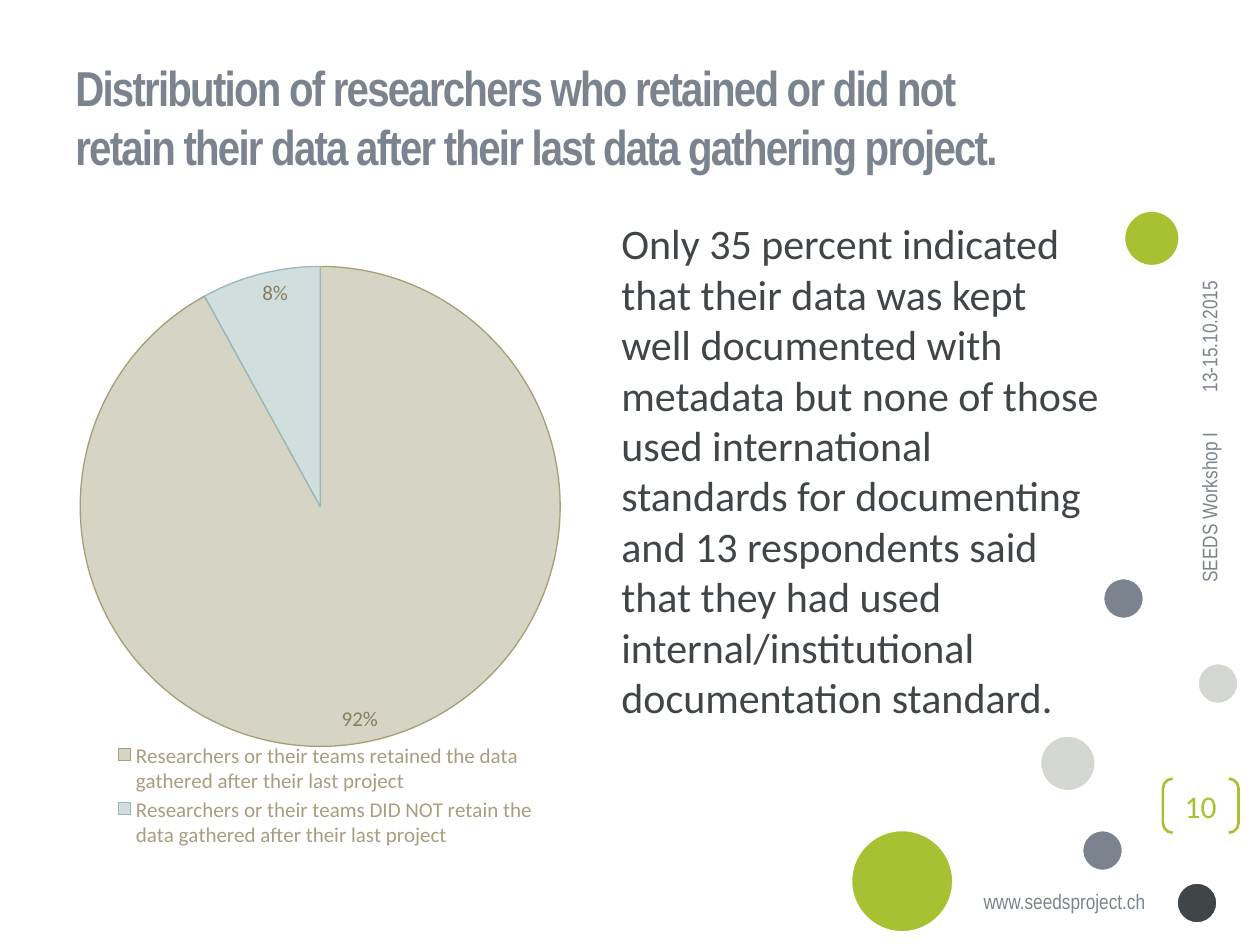
"""Build the slide on researchers who retained their project data."""
from dataclasses import dataclass
from typing import Optional

import pptx
import pptx.chart.data
import pptx.dml.color
import pptx.enum.chart
import pptx.enum.shapes
import pptx.enum.text
import pptx.oxml
import pptx.oxml.ns
import pptx.util

RGBColor = pptx.dml.color.RGBColor
Align = pptx.enum.text.PP_ALIGN
Anchor = pptx.enum.text.MSO_ANCHOR
Shape = pptx.enum.shapes.MSO_SHAPE

WHITE = RGBColor(0xFF, 0xFF, 0xFF)
GREEN = RGBColor(0xA7, 0xC1, 0x33)
CHARCOAL = RGBColor(0x40, 0x45, 0x48)
PALE = RGBColor(0xD4, 0xD6, 0xD2)
SLATE = RGBColor(0x7B, 0x83, 0x8F)
LEGEND_TAN = RGBColor(0xA8, 0x9D, 0x7F)
LABEL_BROWN = RGBColor(0x89, 0x7D, 0x5D)

WIDTH, HEIGHT = pptx.util.Inches(10), pptx.util.Inches(7.5)
COLUMNS, ROWS = 120, 90
LARGE, MEDIUM, SMALL = 9.84, 5.4, 4


@dataclass(frozen=True)
class Area:
    """Place and size in grid columns and rows."""
    column: float
    row: float
    columns: float
    rows: float

    def box(self) -> tuple[int, int, int, int]:
        """Return left, top, width and height on the slide."""
        return (int(WIDTH * self.column / COLUMNS), int(HEIGHT * self.row / ROWS),
                int(WIDTH * self.columns / COLUMNS), int(HEIGHT * self.rows / ROWS))


@dataclass(frozen=True)
class Bubble:
    """Decorative circle."""
    column: float
    row: float
    diameter: float
    color: RGBColor


@dataclass(frozen=True)
class Label:
    """Text with its place and look."""
    text: str
    area: Area
    size: float = 12
    font: str = "Arial Narrow"
    color: RGBColor = SLATE
    bold: bool = False
    tracking: Optional[int] = None
    align: Align = Align.LEFT
    anchor: Anchor = Anchor.MIDDLE
    rotation: float = 0
    wrap: bool = True


@dataclass(frozen=True)
class Slice:
    """Pie slice with its category."""
    category: str
    percent: int
    fill: RGBColor
    outline: RGBColor


BUBBLES = [
    Bubble(81, 79, LARGE, GREEN),
    Bubble(107, 20, MEDIUM, GREEN),
    Bubble(112, 84, SMALL, CHARCOAL),
    Bubble(99, 70, MEDIUM, PALE),
    Bubble(114, 63.1, SMALL, PALE),
    Bubble(103, 79, SMALL, SLATE),
    Bubble(105, 55, SMALL, SLATE),
]
LABELS = [
    Label("www.seedsproject.ch", Area(92.5, 84, 18.5, 3.6), anchor=Anchor.TOP, wrap=False),
    Label("SEEDS Workshop I", Area(104.64, 48.36, 21, 4.32), align=Align.RIGHT, rotation=270),
    Label("13-15.10.2015", Area(107.4, 28.8, 15.5, 3.96), rotation=270),
    Label("Distribution of researchers who retained or did not retain their data "
          "after their last data gathering project.",
          Area(6, 3.6, 96, 15), size=28, bold=True, tracking=-100),
    Label("Only 35 percent indicated that their data was kept well documented with "
          "metadata but none of those used international standards for documenting "
          "and 13 respondents said that they had used internal/institutional "
          "documentation standard.",
          Area(58, 20.16, 48, 60.24), size=24, font="Calibri", color=CHARCOAL,
          anchor=Anchor.TOP),
]
PAGE_NUMBER = Label("10", Area(110.76, 74.16, 7.2, 5.16), size=18, font="Calibri",
                    color=GREEN, align=Align.CENTER)
SLICES = [
    Slice("Researchers or their teams retained the data gathered after their last project",
          92, RGBColor(0xD5, 0xD4, 0xC5), RGBColor(0xA3, 0xA0, 0x74)),
    Slice("Researchers or their teams DID NOT retain the data gathered after their last project",
          8, RGBColor(0xD0, 0xDE, 0xDE), RGBColor(0x9A, 0xB8, 0xB8)),
]
CHART_AREA = Area(6, 20.16, 49, 62.88)
PIE_SHARE = (0.033, 0.083, 0.934, 0.727)
LEGEND_SHARE = (0.08, 0.8, 0.86, 0.17)


def draw_bubble(shapes, bubble: Bubble) -> None:
    """Draw one circle with a white rim."""
    area = Area(bubble.column, bubble.row, bubble.diameter, bubble.diameter)
    circle = shapes.add_shape(Shape.OVAL, *area.box())
    circle.shadow.inherit = False
    circle.fill.solid()
    circle.fill.fore_color.rgb = bubble.color
    circle.line.color.rgb = WHITE
    circle.line.width = pptx.util.Pt(2)


def write_label(frame, label: Label) -> None:
    """Fill a text frame and format its run."""
    frame.text = label.text
    frame.word_wrap = label.wrap
    frame.vertical_anchor = label.anchor
    paragraph = frame.paragraphs[0]
    paragraph.alignment = label.align
    run = paragraph.runs[0]
    style_font(run.font, label.size, label.color, label.font)
    run.font.bold = label.bold
    if label.tracking is not None:
        run._r.get_or_add_rPr().set("spc", str(label.tracking))


def draw_label(shapes, label: Label) -> None:
    """Draw one text box."""
    box = shapes.add_textbox(*label.area.box())
    box.rotation = label.rotation
    write_label(box.text_frame, label)


def draw_page_number(shapes, label: Label) -> None:
    """Draw the page number between brackets."""
    brackets = shapes.add_shape(Shape.DOUBLE_BRACKET, *label.area.box())
    brackets.adjustments[0] = 0.18
    brackets.shadow.inherit = False
    brackets.fill.background()
    brackets.line.color.rgb = GREEN
    brackets.line.width = pptx.util.Pt(1.5)
    frame = brackets.text_frame
    frame.margin_left = frame.margin_right = frame.margin_top = frame.margin_bottom = 0
    write_label(frame, label)


def style_font(font, size: float, color: RGBColor, name: str = "Calibri") -> None:
    """Set size, colour and typeface."""
    font.size = pptx.util.Pt(size)
    font.color.rgb = color
    font.name = name


def layout_xml(share: tuple[float, ...], inner: bool):
    """Return a manual chart layout for shares of the chart's size."""
    target = '<c:layoutTarget val="inner"/>' if inner else ""
    modes = '<c:xMode val="edge"/><c:yMode val="edge"/>'
    sizes = "".join(f'<c:{key} val="{value}"/>' for key, value in zip("xywh", share))
    return pptx.oxml.parse_xml(
        f'<c:layout {pptx.oxml.ns.nsdecls("c")}><c:manualLayout>'
        f"{target}{modes}{sizes}</c:manualLayout></c:layout>")


def draw_pie(shapes, slices: list[Slice]) -> None:
    """Draw the pie chart with percentages and a legend below."""
    data = pptx.chart.data.CategoryChartData()
    data.categories = [part.category for part in slices]
    data.add_series("Series 1", [part.percent for part in slices])
    chart = shapes.add_chart(pptx.enum.chart.XL_CHART_TYPE.PIE, *CHART_AREA.box(), data).chart
    style_font(chart.font, 10, CHARCOAL)
    chart.has_title = False
    chart.has_legend = True
    legend = chart.legend
    legend.position = pptx.enum.chart.XL_LEGEND_POSITION.BOTTOM
    legend.include_in_layout = False
    style_font(legend.font, 12, LEGEND_TAN)

    plot = chart.plots[0]
    plot.vary_by_categories = True
    for index, part in enumerate(slices):
        shown = plot.series[0].points[index].format
        shown.fill.solid()
        shown.fill.fore_color.rgb = part.fill
        shown.line.color.rgb = part.outline
        shown.line.width = pptx.util.Pt(0.75)
    labels = plot.series[0].data_labels
    labels.show_percentage = True
    labels.show_value = False
    labels.position = pptx.enum.chart.XL_LABEL_POSITION.INSIDE_END
    style_font(labels.font, 12, LABEL_BROWN)

    plot_area = chart._chartSpace.chart.plotArea
    for old in plot_area.findall(pptx.oxml.ns.qn("c:layout")):
        plot_area.remove(old)
    plot_area.insert(0, layout_xml(PIE_SHARE, True))
    legend_xml = legend._element
    for old in legend_xml.findall(pptx.oxml.ns.qn("c:layout")):
        legend_xml.remove(old)
    legend_xml.find(pptx.oxml.ns.qn("c:legendPos")).addnext(layout_xml(LEGEND_SHARE, False))


def main() -> None:
    """Build and save the slide."""
    deck = pptx.Presentation()
    deck.slide_width, deck.slide_height = WIDTH, HEIGHT
    shapes = deck.slides.add_slide(deck.slide_layouts[6]).shapes
    for bubble in BUBBLES:
        draw_bubble(shapes, bubble)
    draw_page_number(shapes, PAGE_NUMBER)
    for label in LABELS:
        draw_label(shapes, label)
    draw_pie(shapes, SLICES)
    deck.save("out.pptx")


if __name__ == "__main__":
    main()
